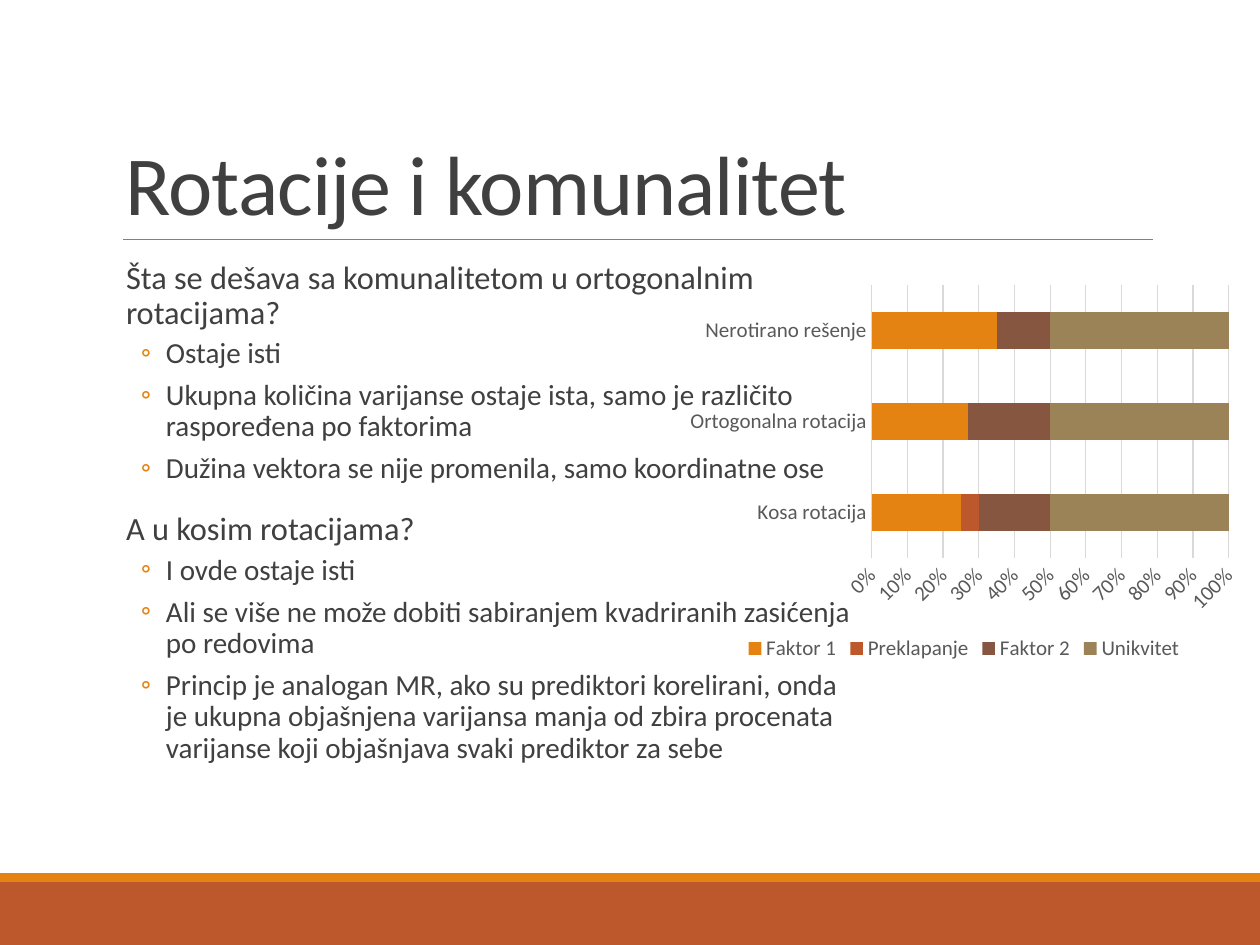
from dataclasses import dataclass

from lxml import etree
from pptx import Presentation
from pptx.chart.data import CategoryChartData
from pptx.dml.color import RGBColor
from pptx.enum.chart import XL_CHART_TYPE, XL_LEGEND_POSITION, XL_TICK_MARK
from pptx.enum.shapes import MSO_CONNECTOR, MSO_SHAPE
from pptx.enum.text import MSO_ANCHOR, MSO_AUTO_SIZE, PP_ALIGN
from pptx.oxml.ns import qn
from pptx.util import Emu, Pt

PX = 914400 / 126
RECT = MSO_SHAPE.RECTANGLE
STRAIGHT = MSO_CONNECTOR.STRAIGHT
STACKED_BAR = XL_CHART_TYPE.BAR_STACKED_100
NO_TICK = XL_TICK_MARK.NONE
LEGEND_BOTTOM = XL_LEGEND_POSITION.BOTTOM
LEFT = PP_ALIGN.LEFT


def px(n):
    return Emu(round(n * PX))


def rgb(value):
    return RGBColor.from_string(value)


def set_all(obj, values):
    for name, value in values.items():
        setattr(obj, name, value)


@dataclass(frozen=True)
class Theme:
    font: str = "Calibri"
    text: str = "404040"
    muted: str = "595959"
    rule: str = "808080"
    grid: str = "D9D9D9"
    orange: str = "E48312"
    rust: str = "BD582C"
    brown: str = "865640"
    tan: str = "9B8357"
    title_size: float = 48
    topic_size: float = 18.5
    point_size: float = 16.6
    chart_size: float = 12


# Per list level: bullet, left indent and hanging part in px, spacing
LEVELS = [
    {"bullet": " ", "left": 13, "hang": 13, "before": 12, "after": 2},
    {"bullet": "◦", "left": 53, "hang": 25, "before": 2, "after": 4},
]


class SlideBuilder:
    def __init__(self, slide, theme):
        self.slide = slide
        self.theme = theme

    def style_font(self, font, size, color):
        set_all(font, {"name": self.theme.font, "size": Pt(size)})
        font.color.rgb = rgb(color)

    def band(self, x, y, w, h, color):
        sp = self.slide.shapes.add_shape(RECT, px(x), px(y), px(w), px(h))
        sp.shadow.inherit = False
        sp.fill.solid()
        sp.fill.fore_color.rgb = rgb(color)
        sp.line.fill.background()

    def rule(self, x1, y1, x2, y2):
        line = self.slide.shapes.add_connector(STRAIGHT, px(x1), px(y1), px(x2), px(y2))
        line.line.color.rgb = rgb(self.theme.rule)
        line.line.width = Pt(0.5)
        etree.SubElement(line.element.spPr, qn("a:effectLst"))

    def place(self, sp, x, y, w, h):
        """Position a placeholder in front of everything drawn so far."""
        set_all(sp, {"left": px(x), "top": px(y), "width": px(w), "height": px(h)})
        sp.element.getparent().append(sp.element)
        tf = sp.text_frame
        set_all(tf, {"word_wrap": True, "auto_size": MSO_AUTO_SIZE.NONE})
        return tf

    def title(self, text, *box):
        tf = self.place(self.slide.shapes.title, *box)
        tf.vertical_anchor = MSO_ANCHOR.BOTTOM
        p = tf.paragraphs[0]
        set_all(p, {"alignment": LEFT, "line_spacing": 0.85})
        r = p.add_run()
        r.text = text
        self.style_font(r.font, self.theme.title_size, self.theme.text)
        r.font._element.set("spc", "-50")

    def bullet(self, p, level):
        p_pr = p._p.get_or_add_pPr()
        p_pr.set("marL", str(px(level["left"])))
        p_pr.set("indent", str(-px(level["hang"])))
        color = etree.SubElement(p_pr, qn("a:buClr"))
        etree.SubElement(color, qn("a:srgbClr"), val=self.theme.orange)
        etree.SubElement(p_pr, qn("a:buFont"), typeface=self.theme.font)
        etree.SubElement(p_pr, qn("a:buChar"), char=level["bullet"])

    def body(self, items, *box):
        tf = self.place(self.slide.placeholders[1], *box)
        set_all(tf, {"margin_left": 0, "margin_right": 0, "vertical_anchor": MSO_ANCHOR.TOP})
        sizes = [self.theme.topic_size, self.theme.point_size]
        for i, (lvl, text) in enumerate(items):
            p = tf.add_paragraph() if i else tf.paragraphs[0]
            level = LEVELS[lvl]
            self.bullet(p, level)
            set_all(p, {
                "level": lvl, "alignment": LEFT, "line_spacing": 0.9,
                "space_before": Pt(level["before"] if i else 0),
                "space_after": Pt(level["after"]),
            })
            r = p.add_run()
            r.text = text
            self.style_font(r.font, sizes[lvl], self.theme.text)

    def stacked_bars(self, categories, series, x, y, w, h):
        t = self.theme
        data = CategoryChartData()
        data.categories = categories
        for name, values, _ in series:
            data.add_series(name, values)
        chart = self.slide.shapes.add_chart(
            STACKED_BAR, px(x), px(y), px(w), px(h), data).chart
        set_all(chart, {"has_title": False, "has_legend": True})
        self.style_font(chart.font, t.chart_size, t.muted)

        plot = chart.plots[0]
        set_all(plot, {"gap_width": 150, "overlap": 100, "vary_by_categories": False})
        for s, (_, _, color) in zip(plot.series, series):
            s.format.fill.solid()
            s.format.fill.fore_color.rgb = rgb(color)

        # Axes, gridlines and legend
        cat, val = chart.category_axis, chart.value_axis
        for axis in (cat, val):
            set_all(axis, {"major_tick_mark": NO_TICK, "minor_tick_mark": NO_TICK})
            self.style_font(axis.tick_labels.font, t.chart_size, t.muted)
        cat.has_major_gridlines = False
        val.has_major_gridlines = True
        val.format.line.fill.background()
        set_all(val.tick_labels, {"number_format": "0%", "number_format_is_linked": False})
        for part in (cat, val.major_gridlines):
            part.format.line.color.rgb = rgb(t.grid)
            part.format.line.width = Pt(0.75)
        set_all(chart.legend, {"position": LEGEND_BOTTOM, "include_in_layout": False})
        self.style_font(chart.legend.font, t.chart_size, t.muted)


def main():
    prs = Presentation()
    set_all(prs, {"slide_width": px(1260), "slide_height": px(945)})
    theme = Theme()
    s = SlideBuilder(prs.slides.add_slide(prs.slide_layouts[1]), theme)

    # Footer bands and title rule
    s.band(0, 882, 1260, 63, theme.rust)
    s.band(0, 873, 1260, 9, theme.orange)
    s.rule(123, 239, 1153, 239)

    # Title and list
    s.title("Rotacije i komunalitet", 113, 39, 1040, 200)
    s.body([
        (0, "Šta se dešava sa komunalitetom u ortogonalnim rotacijama?"),
        (1, "Ostaje isti"),
        (1, "Ukupna količina varijanse ostaje ista, samo je različito raspoređena po faktorima"),
        (1, "Dužina vektora se nije promenila, samo koordinatne ose"),
        (0, "A u kosim rotacijama?"),
        (1, "I ovde ostaje isti"),
        (1, "Ali se više ne može dobiti sabiranjem kvadriranih zasićenja po redovima"),
        (1, "Princip je analogan MR, ako su prediktori korelirani, onda je ukupna objašnjena "
            "varijansa manja od zbira procenata varijanse koji objašnjava svaki prediktor za sebe"),
    ], 113, 255, 746, 554)

    # Variance shares by rotation
    s.stacked_bars(
        ["Kosa rotacija", "Ortogonalna rotacija", "Nerotirano rešenje"],
        [
            ("Faktor 1", (25, 27, 35), theme.orange),
            ("Preklapanje", (5, 0, 0), theme.rust),
            ("Faktor 2", (20, 23, 15), theme.brown),
            ("Unikvitet", (50, 50, 50), theme.tan),
        ],
        679, 277, 570, 389)

    prs.save("out.pptx")


if __name__ == "__main__":
    main()
